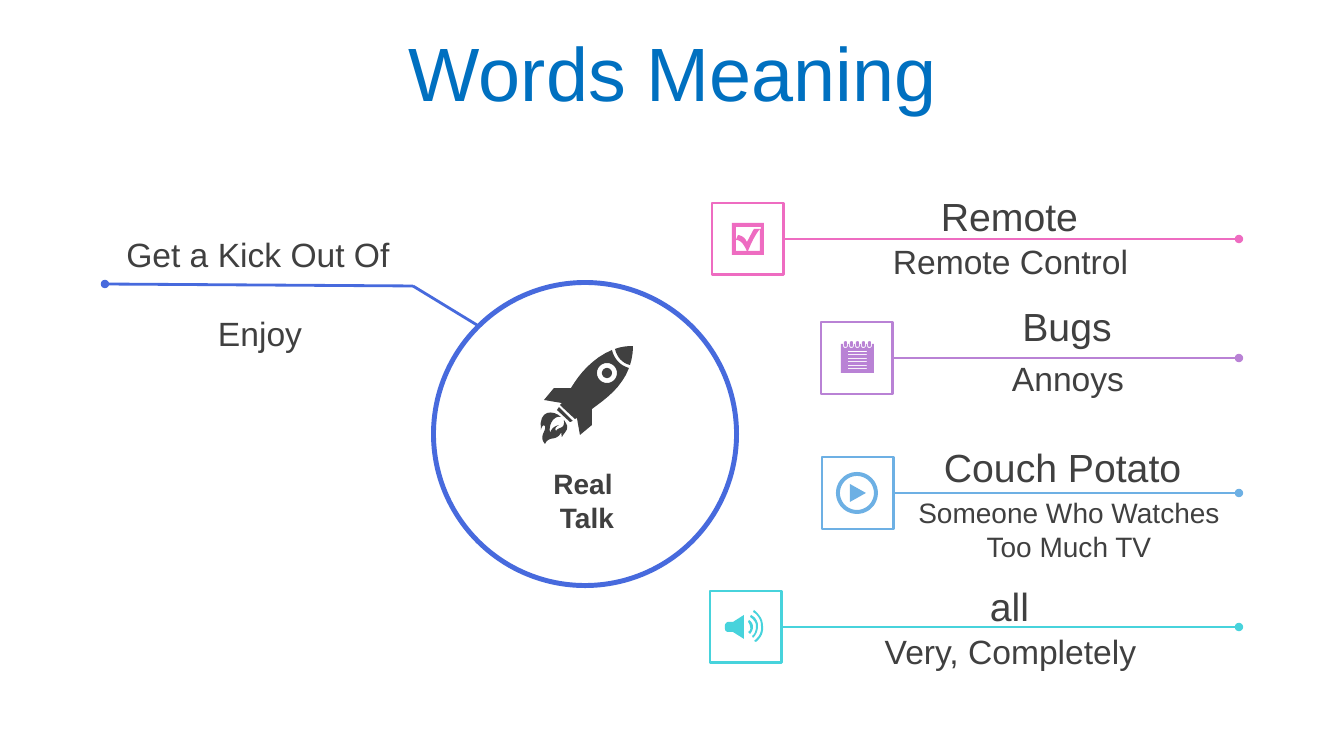
from math import cos, sin, tau
from lxml.etree import SubElement as Sub
from pptx import Presentation
from pptx.dml.color import RGBColor
from pptx.enum.shapes import MSO_CONNECTOR as Conn, MSO_SHAPE as Kind
from pptx.enum.text import MSO_ANCHOR as Anchor, PP_ALIGN as Align
from pptx.oxml.ns import qn
from pptx.util import Pt

PX = 914400 / 100.8
FINE = 10
BLUE = RGBColor(0x00, 0x70, 0xC0)
ROYAL = RGBColor(0x47, 0x6A, 0xDD)
DARK = RGBColor(0x40, 0x40, 0x40)
WHITE = RGBColor(0xFF, 0xFF, 0xFF)
PINK = RGBColor(0xEE, 0x6C, 0xC1)
PLUM = RGBColor(0xB9, 0x82, 0xD5)
SKY = RGBColor(0x6D, 0xB0, 0xE4)
TEAL = RGBColor(0x47, 0xD3, 0xDC)


def ring(x, y, r):
    return [(x + r * cos(tau * i / 48), y + r * sin(tau * i / 48)) for i in range(48)]


def rect(x, y, w, h):
    return [(x, y), (x + w, y), (x + w, y + h), (x, y + h)]


def notch(x):
    return [(x, 3), (x, 4), (x, 6, 1 + x, 7, 2 + x, 7),
            (4 + x, 7, 5 + x, 6, 5 + x, 4), (5 + x, 3)]


def loop(x):
    return [(x, 1), (x, 0, 3 + x, 0, 3 + x, 1), (3 + x, 5), (3 + x, 6, x, 6, x, 5)]


ROCKET = [
    [(20, 71), (15, 69, 7, 76, 9, 87), (11, 81, 15, 80, 18, 79),
     (17, 80, 13, 81, 15, 85), (18, 80, 24, 84, 23, 74),
     (30, 83, 24, 85, 21, 91), (20, 90, 21, 84, 20, 87),
     (15, 96, 8, 89, 4, 98), (-3, 90, 6, 85, 4, 80),
     (3, 79, 1, 79, 0, 84), (-3, 63, 13, 64, 20, 71)],
    [(18, 61), (32, 75), (31, 75, 30, 76, 29, 76), (16, 64)],
    ring(66, 27, 5), ring(66, 27, 10),
    [(71, 4), (73, 13, 80, 20, 88, 22), (81, 41, 65, 53, 51, 63), (51, 79),
     (39, 89), (36, 72), (34, 73), (19, 59), (21, 57), (3, 54), (13, 42),
     (30, 42), (39, 27, 52, 12, 71, 4)],
    [(92, 0), (92, 7, 91, 13, 89, 19), (81, 17, 76, 11, 74, 3), (79, 1, 85, 0, 92, 0)],
]
CHECK = [
    rect(0, 0, 32, 32),
    [(4, 4), (4, 28), (15, 28), (13, 24, 10, 17, 4, 17), (6, 12),
     (11, 13, 13, 15, 15, 19), (18, 14, 19, 11, 22, 6), (28, 6),
     (23, 12, 19, 21, 16, 28), (28, 28), (28, 6), (29, 6), (29, 4)],
]
NOTES = [
    [(0, 3)] + [p for i in range(5) for p in notch(2 + 6 * i)] + [(33, 3), (33, 32), (0, 32)],
    *[loop(3 + 6 * i) for i in range(5)],
    *[rect(7, 10 + 7 * i // 2, 19, 1) for i in range(6)],
]
PLAY = [ring(21, 21, 21), ring(21, 21, 17), [(14, 12), (30, 21), (14, 30)]]
SOUND = [
    [(19, 5), (19, 29), (8, 22), (3, 22), (2, 22, 0, 21, 0, 19), (0, 15),
     (0, 14, 2, 12, 3, 12), (8, 12)],
    [(24, 10), (26, 11, 28, 14, 28, 17), (28, 19, 27, 22, 25, 24), (23, 22),
     (25, 21, 26, 19, 25, 17), (25, 15, 24, 13, 23, 12)],
    [(26, 5), (30, 7, 33, 11, 33, 16), (33, 21, 31, 25, 28, 28), (27, 26),
     (30, 24, 31, 20, 31, 16), (31, 12, 28, 9, 25, 7)],
    [(29, 0), (34, 4, 38, 9, 38, 16), (39, 22, 36, 28, 31, 32), (29, 31),
     (34, 27, 37, 22, 36, 16), (36, 10, 33, 5, 28, 2)],
]
SIDE, END = 72, 1239
ROWS = [
    (712, 203, PINK, CHECK, (732, 223), (786, 447), ("Remote", 187), ("Remote Control", 236, 24)),
    (821, 322, PLUM, NOTES, (841, 341), (902, 330), ("Bugs", 297), ("Annoys", 353, 24)),
    (822, 457, SKY, PLAY, (836, 472), (903, 330), ("Couch Potato ", 438),
     ("Someone Who Watches Too Much TV", 491, 20)),
    (710, 591, TEAL, SOUND, (725, 610), (786, 447), ("all", 577), ("Very, Completely", 626, 24)),
]
LEFT = [("Get a Kick Out Of", 111, 229, 294), ("Enjoy", 127, 308, 266)]
BEND = [(105, 284), (413, 286), (477, 325)]

deck = Presentation()
deck.slide_width, deck.slide_height = round(1344 * PX), round(756 * PX)
slide = deck.slides.add_slide(deck.slide_layouts[6])
parts = slide.shapes


def emu(*nums):
    return [round(n * PX) for n in nums]


def text(words, x, y, w, h, size=24, color=DARK, bold=False, mid=False, gap=None, lead=None):
    frame = parts.add_textbox(*emu(x, y, w, h)).text_frame
    frame.word_wrap = True
    if mid:
        frame.vertical_anchor = Anchor.MIDDLE
    for i, line in enumerate(words.split("\n")):
        para = frame.add_paragraph() if i else frame.paragraphs[0]
        para.alignment = Align.CENTER
        if gap:
            para.space_before = Pt(gap)
        if lead:
            para.line_spacing = lead
        run = para.add_run()
        run.text = line
        font = run.font
        font.name, font.size, font.bold = "Arial", Pt(size), bold
        font.color.rgb = color


def shape(kind, x, y, side, fill, edge=None):
    item = parts.add_shape(kind, *emu(x, y, side, side))
    item.shadow.inherit = False
    item.fill.solid()
    item.fill.fore_color.rgb = fill
    if edge is None:
        item.line.fill.background()
    else:
        item.line.color.rgb = edge
        item.line.width = Pt(2)
    return item


def link(start, end, color, dot=None, box=None):
    wire = parts.add_connector(Conn.STRAIGHT, *emu(*start, *end))
    if box is not None:
        wire.begin_connect(box, 3)
    wire.line.color.rgb = color
    wire.line.width = Pt(2)
    if dot:
        Sub(wire.line._get_or_add_ln(), qn("a:" + dot), type="oval")
    Sub(wire._element.spPr, qn("a:effectLst"))


def trace(loop):
    out = []
    for step in loop:
        if len(step) == 2:
            out.append(step)
            continue
        nodes = [out[-1], step[:2], step[2:4], step[4:]]
        for i in range(1, 9):
            t = i / 8
            part = ((1 - t) ** 3, 3 * t * (1 - t) ** 2, 3 * t * t * (1 - t), t ** 3)
            out.append(tuple(sum(k * n[a] for k, n in zip(part, nodes)) for a in (0, 1)))
    return out


def icon(loops, x, y, color):
    pen = None
    for loop in loops:
        dots = [((x + a) * FINE, (y + b) * FINE) for a, b in trace(loop)]
        if pen is None:
            pen = parts.build_freeform(*dots[0], scale=PX / FINE)
        else:
            pen.move_to(*dots[0])
        pen.add_line_segments(dots[1:], close=True)
    item = pen.convert_to_shape()
    item.shadow.inherit = False
    item.fill.solid()
    item.fill.fore_color.rgb = color
    item.line.fill.background()


text("Words Meaning", 35, 37, 1276, 80, size=54, color=BLUE, mid=True, gap=10, lead=0.9)
hub = shape(Kind.DONUT, 431, 280, 308, ROYAL)
hub.adjustments[0] = 0.016
for words, x, y, w in LEFT:
    text(words, x, y, w, 70)
link(BEND[0], BEND[1], ROYAL, dot="headEnd")
link(BEND[1], BEND[2], ROYAL)
text("Real \nTalk", 507, 462, 160, 78, size=20, bold=True)
icon(ROCKET, 541, 346, DARK)

for x, y, color, loops, spot, (left, wide), (head, top), (note, low, size) in ROWS:
    box = shape(Kind.RECTANGLE, x, y, SIDE, WHITE, color)
    mid = y + SIDE // 2
    link((x + SIDE, mid), (END, mid), color, dot="tailEnd", box=box)
    text(note, left + 1, low, wide, 50, size=size)
    text(head, left, top, wide, 57, size=28)
    icon(loops, *spot, color)

deck.save("out.pptx")
